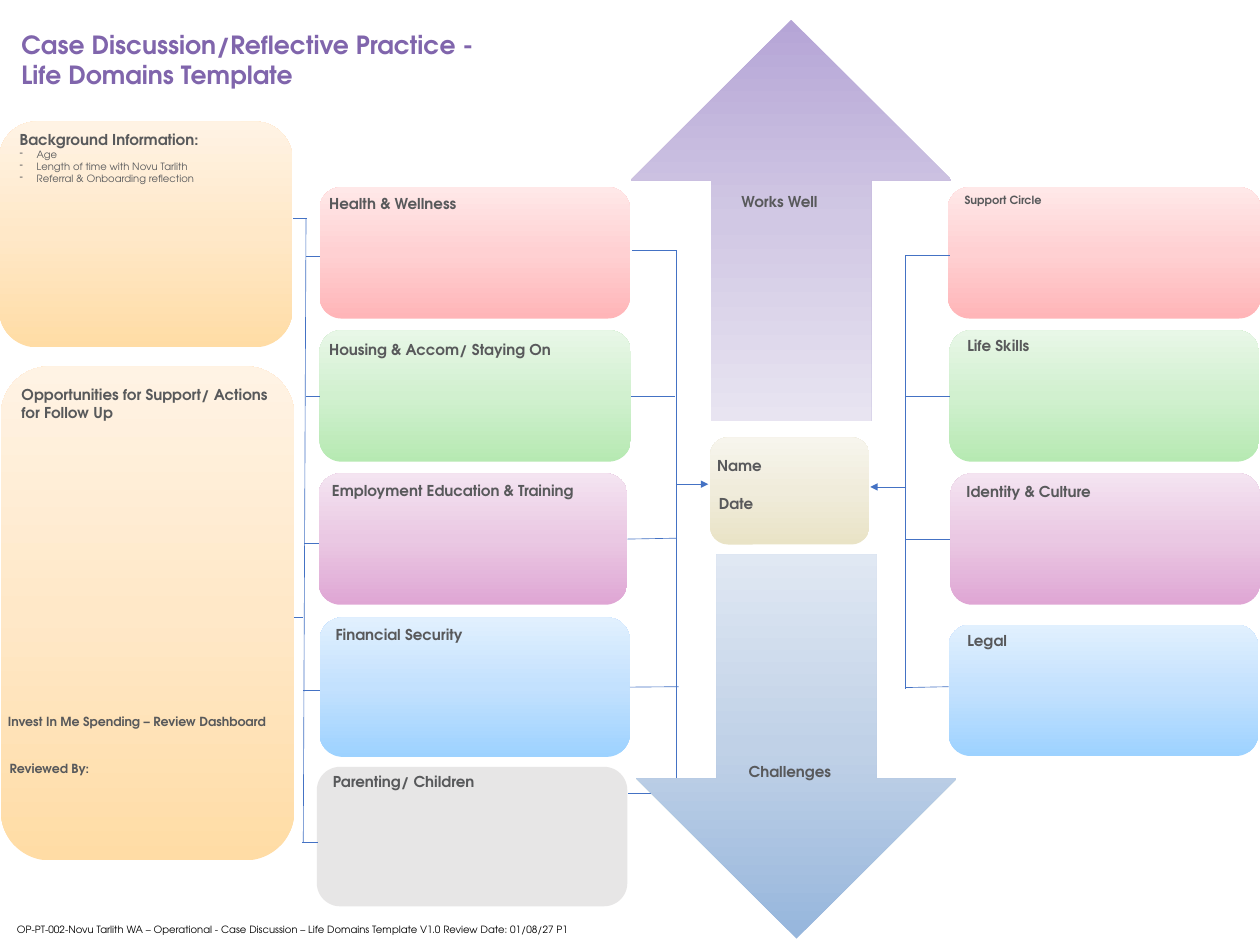
from copy import deepcopy

from lxml import etree
from pptx import Presentation
from pptx.dml.color import RGBColor
from pptx.enum.shapes import MSO_CONNECTOR, MSO_SHAPE
from pptx.enum.text import MSO_AUTO_SIZE
from pptx.oxml.ns import qn
from pptx.util import Inches, Pt

ROUNDED = MSO_SHAPE.ROUNDED_RECTANGLE
DOWN_ARROW = MSO_SHAPE.DOWN_ARROW
STRAIGHT = MSO_CONNECTOR.STRAIGHT
GROW = MSO_AUTO_SIZE.SHAPE_TO_FIT_TEXT
LEFT_SIDE, RIGHT_SIDE = 1, 3
FONT = "TeX Gyre Adventor"

COLORS = {"text": "58595B", "title": "8065AC", "footer": "000000",
          "line": "4472C4", "grey": "E7E6E6"}
GRADIENTS = {
    "red": ("FFB5B8", "FFD0D2", "FFE8E8"),
    "green": ("B6E9B2", "D1F0CF", "E8F7E7"),
    "pink": ("DFA6D4", "EAC8E3", "F4E4F1"),
    "blue": ("9DD2FF", "C3E1FE", "E1F0FE"),
    "orange": ("FFDCA5", "FFE8C8", "FFF3E4"),
    "sand": ("E9E3C6", "F0ECDB", "F7F5ED"),
    "steel": ("96B6DC", "C0D1E7", "E0E8F3"),
    "purple": ("B5A5D6", "D1C8E4", "E8E4F1"),
}

prs = Presentation()
prs.slide_width = Inches(14)
prs.slide_height = Inches(10.5)
slide = prs.slides.add_slide(prs.slide_layouts[6])


def add_link(x1, y1, x2, y2, arrow=False):
    link = slide.shapes.add_connector(
        STRAIGHT, Inches(x1), Inches(y1), Inches(x2), Inches(y2))
    link.line.color.rgb = RGBColor.from_string(COLORS["line"])
    link.line.width = Pt(0.5)
    if arrow:
        etree.SubElement(link.line._get_or_add_ln(), qn("a:tailEnd"), type="triangle")
    etree.SubElement(link._element.spPr, qn("a:effectLst"))
    return link


def add_text(left, top, width, height, lines, size=12, color="text", bold=True):
    box = slide.shapes.add_textbox(
        Inches(left), Inches(top), Inches(width), Inches(height))
    frame = box.text_frame
    frame.word_wrap = True
    frame.auto_size = GROW
    frame.text = "\n".join(lines)
    font_format = {"name": FONT, "size": Pt(size), "bold": bold}
    for paragraph in frame.paragraphs:
        font = paragraph.runs[0].font
        for attribute, value in font_format.items():
            setattr(font, attribute, value)
        font.color.rgb = RGBColor.from_string(COLORS[color])
    return frame


add_link(7.51, 2.78, 7.51, 8.81)
add_link(6.98, 8.81, 7.54, 8.81)

panels = [
    ("health", ROUNDED, 3.55, 2.08, 3.45, 1.46, "red"),
    ("opportunities", ROUNDED, 0.01, 4.07, 3.26, 5.49, "orange"),
    ("name", ROUNDED, 7.89, 4.86, 1.77, 1.19, "sand"),
    ("challenges", DOWN_ARROW, 7.07, 6.16, 3.56, 4.27, "steel"),
    ("works well", DOWN_ARROW, 7.01, 0.22, 3.56, 4.46, "purple"),
    ("housing", ROUNDED, 3.55, 3.67, 3.46, 1.46, "green"),
    ("employment", ROUNDED, 3.54, 5.26, 3.43, 1.46, "pink"),
    ("financial", ROUNDED, 3.55, 6.86, 3.45, 1.55, "blue"),
    ("support", ROUNDED, 10.53, 2.08, 3.48, 1.46, "red"),
    ("life skills", ROUNDED, 10.55, 3.67, 3.44, 1.46, "green"),
    ("identity", ROUNDED, 10.56, 5.26, 3.44, 1.46, "pink"),
    ("legal", ROUNDED, 10.54, 6.94, 3.44, 1.46, "blue"),
    ("background", ROUNDED, -0.01, 1.35, 3.26, 2.51, "orange"),
    ("parenting", ROUNDED, 3.52, 8.52, 3.45, 1.55, "grey"),
]
domains = {}
for domain, outline, left, top, width, height, color in panels:
    panel = slide.shapes.add_shape(
        outline, Inches(left), Inches(top), Inches(width), Inches(height))
    panel.shadow.inherit = False
    panel.line.fill.background()
    if color in GRADIENTS:
        panel.fill.gradient()
        panel.fill.gradient_angle = 90
        stop_list = panel._element.spPr.find(".//" + qn("a:gsLst"))
        stop_list.append(deepcopy(stop_list[-1]))
        for stop, position, shade in zip(
                panel.fill.gradient_stops, (0, 0.5, 1), GRADIENTS[color]):
            stop.position = position
            stop.color.rgb = RGBColor.from_string(shade)
    else:
        panel.fill.solid()
        panel.fill.fore_color.rgb = RGBColor.from_string(COLORS[color])
    domains[domain] = panel
domains["works well"].rotation = 180

headings = [
    (3.56, 2.11, 1.97, 0.3, "Health & Wellness", 12),
    (3.59, 5.3, 2.98, 0.3, "Employment Education & Training", 12),
    (3.56, 3.73, 3.16, 0.3, "Housing & Accom/ Staying On", 12),
    (0.14, 4.23, 3.14, 3.69, "Opportunities for Support/ Actions for Follow Up", 12),
    (3.63, 6.9, 1.97, 0.3, "Financial Security", 12),
    (10.62, 2.1, 1.97, 0.25, "Support Circle", 9),
    (10.65, 3.69, 1.97, 0.3, "Life Skills", 12),
    (8.14, 2.09, 1.17, 0.3, "Works Well", 12),
    (8.22, 8.42, 1.24, 0.3, "Challenges", 12),
    (7.87, 5.02, 0.95, 0.3, "Name", 12),
    (10.64, 5.31, 1.97, 0.3, "Identity & Culture", 12),
    (10.65, 6.97, 1.97, 0.3, "Legal", 12),
    (-0.01, 7.88, 3.37, 0.27, "Invest In Me Spending – Review Dashboard", 10),
    (0.01, 8.41, 3.08, 0.27, "Reviewed By:", 10),
    (7.89, 5.45, 0.95, 0.3, "Date", 12),
    (3.6, 8.54, 1.97, 0.3, "Parenting/ Children", 12),
]
for left, top, width, height, heading, size in headings:
    add_text(left, top, width, height, [heading], size)

add_text(0.14, 0.28, 5.65, 0.77,
         ["Case Discussion/Reflective Practice -", "Life Domains Template"],
         20, "title")
add_text(0.09, 10.21, 11.77, 0.45,
         ["OP-PT-002-Novu Tarlith WA – Operational - Case Discussion – "
          "Life Domains Template V1.0 Review Date: 01/08/27 P1"],
         8, "footer", False)

background_notes = add_text(0.12, 1.4, 2.64, 1.01, [
    "Background Information:", "Age", "Length of time with Novu Tarlith",
    "Referral & Onboarding reflection"])
for item in background_notes.paragraphs[1:]:
    item.runs[0].font.size = Pt(8)
    item.runs[0].font.bold = False
    properties = item._p.get_or_add_pPr()
    properties.set("marL", str(Inches(0.19)))
    properties.set("indent", str(-Inches(0.19)))
    etree.SubElement(properties, qn("a:buChar"), char="-")

plain_links = [
    (10.06, 2.84, 10.06, 7.65),
    (7.02, 2.78, 7.51, 2.78),
    (10.06, 7.64, 10.54, 7.63),
    (10.06, 2.84, 10.55, 2.84),
    (3.4, 2.43, 3.37, 9.36),
    (3.26, 2.43, 3.41, 2.43),
    (3.4, 2.85, 3.55, 2.85),
    (3.38, 6.04, 3.54, 6.04),
    (3.37, 7.67, 3.55, 7.67),
    (3.36, 9.36, 3.53, 9.36),
    (3.27, 6.86, 3.37, 6.86),
]
for ends in plain_links:
    add_link(*ends)

add_link(7.51, 5.38, 7.87, 5.38, arrow=True)
add_link(10.07, 5.41, 9.67, 5.41, arrow=True)

joined_links = [
    ("housing", RIGHT_SIDE, 7.5, 4.4, 7.01),
    ("employment", RIGHT_SIDE, 7.51, 5.98, 6.97),
    ("financial", RIGHT_SIDE, 7.54, 7.63, 7),
    ("identity", LEFT_SIDE, 10.07, 5.99, 10.56),
    ("life skills", LEFT_SIDE, 10.06, 4.4, 10.55),
    ("housing", LEFT_SIDE, 3.4, 4.4, 3.55),
]
for domain, side, trunk_x, y, panel_x in joined_links:
    add_link(trunk_x, y, panel_x, y).end_connect(domains[domain], side)

prs.save("out.pptx")
